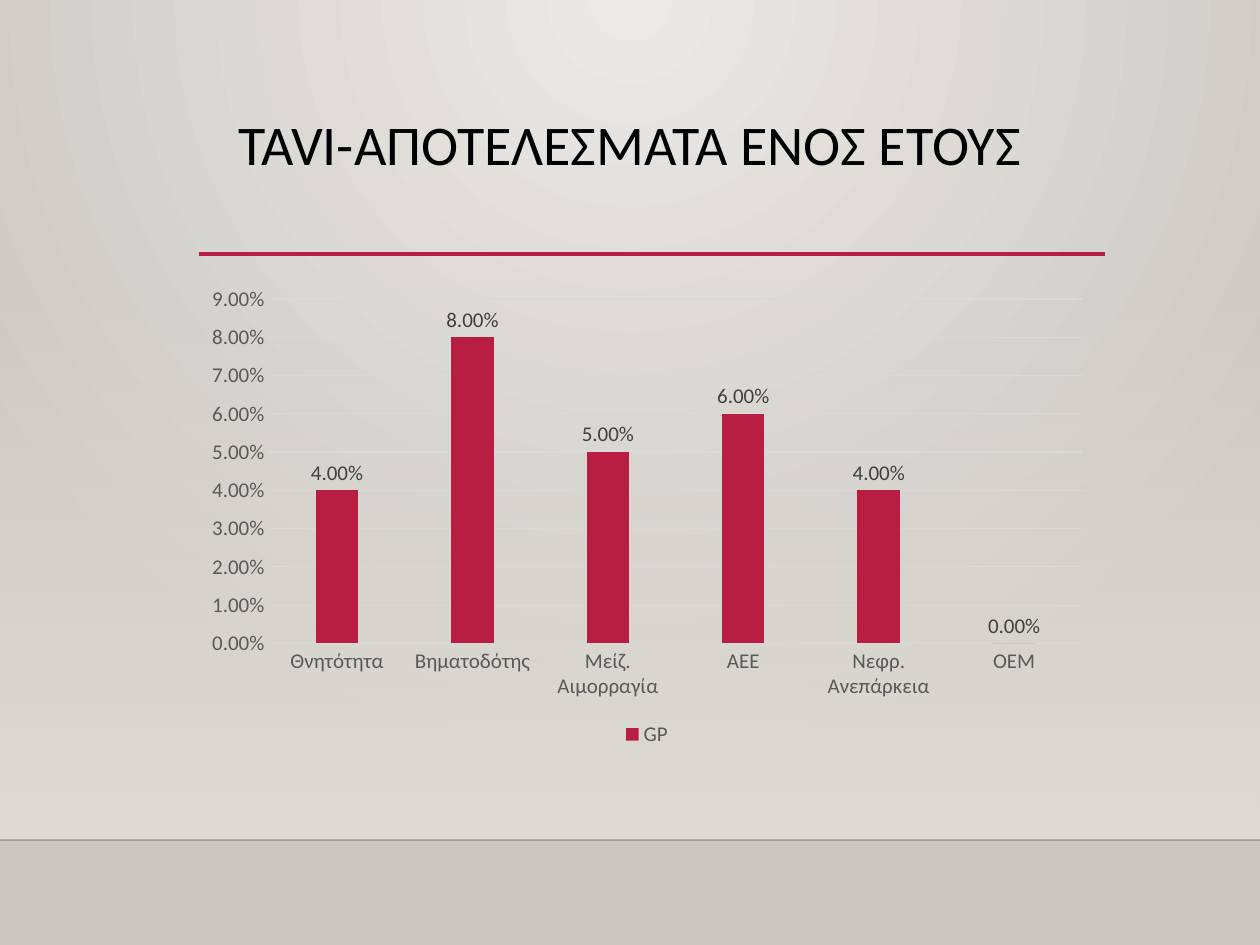
import pptx
import pptx.util
import pptx.chart.data
import pptx.enum.chart
import pptx.enum.shapes
import pptx.enum.text
import pptx.dml.color
import pptx.oxml
import pptx.oxml.ns

SCALE = 7257.14
FONT = "Calibri"
PERCENT = "0.00%"
COLORS = {
    "glow": "ECEAE7", "edge": "CAC7C1", "wall": "DFDBD5", "floor": "000001",
    "accent": "B71E42", "title": "000000", "axis": "595959", "label": "404040",
    "grid": "D9D9D9",
}

TITLE = "TAVI-ΑΠΟΤΕΛΕΣΜΑΤΑ ΕΝΟΣ ΕΤΟΥΣ"
SERIES = "GP"
RESULTS = [
    ("Θνητότητα", 0.04),
    ("Βηματοδότης", 0.08),
    ("Μείζ. Αιμορραγία", 0.05),
    ("AEE", 0.06),
    ("Νεφρ. Ανεπάρκεια", 0.04),
    ("ΟΕΜ", 0),
]

SLIDE = (1260, 945)
WALL = (0, 277, 1260, 563)
TITLE_BOX = (0, 111, 1260, 145)
CHART_BOX = (194, 277, 906, 475)
RULES = [
    (0, 1260, 840, "floor", 1, 20),
    (199, 1105, 254, "accent", 2.5, 100),
]
CIRCLE = '<a:path path="circle"><a:fillToRect l="43000" t="0" r="43000" b="100000"/></a:path>'
DOWNWARD = '<a:lin ang="5400000" scaled="0"/>'


def px(*values):
    return [pptx.util.Emu(round(value * SCALE)) for value in values]


def color(name):
    return pptx.dml.color.RGBColor.from_string(COLORS[name])


def style_font(font, size, name):
    font.name = FONT
    font.size = pptx.util.Pt(size)
    font.color.rgb = color(name)


def style_line(line, name, width):
    line.color.rgb = color(name)
    line.width = pptx.util.Pt(width)


def set_gradient(element, fill, stops, direction):
    fill.solid()
    fill.fore_color.rgb = color(stops[0][1])
    stop_xml = "".join(
        f'<a:gs pos="{place * 1000}"><a:srgbClr val="{COLORS[name]}">'
        f'<a:alpha val="{alpha * 1000}"/></a:srgbClr></a:gs>'
        for place, name, alpha in stops
    )
    gradient = pptx.oxml.parse_xml(
        f'<a:gradFill {pptx.oxml.ns.nsdecls("a")} rotWithShape="1">'
        f"<a:gsLst>{stop_xml}</a:gsLst>{direction}</a:gradFill>"
    )
    solid = element.find(".//" + pptx.oxml.ns.qn("a:solidFill"))
    solid.getparent().replace(solid, gradient)


def add_backdrop(page):
    set_gradient(page.element, page.background.fill,
                 [(0, "glow", 100), (100, "edge", 100)], CIRCLE)
    wall = page.shapes.add_shape(pptx.enum.shapes.MSO_SHAPE.RECTANGLE, *px(*WALL))
    wall.shadow.inherit = False
    wall.line.fill.background()
    set_gradient(wall.element, wall.fill, [(0, "wall", 0), (100, "wall", 100)], DOWNWARD)


def add_rule(page, left, right, y, name, width, alpha):
    rule = page.shapes.add_connector(
        pptx.enum.shapes.MSO_CONNECTOR.STRAIGHT, *px(left, y, right, y))
    style_line(rule.line, name, width)
    properties = rule.element.spPr
    if alpha < 100:
        shade = properties.find(".//" + pptx.oxml.ns.qn("a:srgbClr"))
        shade.append(pptx.oxml.parse_xml(
            f'<a:alpha {pptx.oxml.ns.nsdecls("a")} val="{alpha * 1000}"/>'))
    properties.append(pptx.oxml.parse_xml(f'<a:effectLst {pptx.oxml.ns.nsdecls("a")}/>'))


def add_title(page):
    frame = page.shapes.add_textbox(*px(*TITLE_BOX)).text_frame
    frame.word_wrap = True
    frame.vertical_anchor = pptx.enum.text.MSO_ANCHOR.TOP
    frame.text = TITLE
    para = frame.paragraphs[0]
    para.alignment = pptx.enum.text.PP_ALIGN.CENTER
    para.line_spacing = 0.9
    style_font(para.runs[0].font, 32, "title")


def add_results_chart(page):
    data = pptx.chart.data.CategoryChartData(number_format=PERCENT)
    data.categories = [category for category, value in RESULTS]
    data.add_series(SERIES, [value for category, value in RESULTS])
    chart = page.shapes.add_chart(
        pptx.enum.chart.XL_CHART_TYPE.COLUMN_CLUSTERED, *px(*CHART_BOX), data).chart
    style_font(chart.font, 10, "title")
    chart.has_title = False
    chart.has_legend = True
    chart.legend.position = pptx.enum.chart.XL_LEGEND_POSITION.BOTTOM
    chart.legend.include_in_layout = False
    style_font(chart.legend.font, 12, "axis")

    for axis in (chart.category_axis, chart.value_axis):
        axis.major_tick_mark = pptx.enum.chart.XL_TICK_MARK.NONE
        axis.minor_tick_mark = pptx.enum.chart.XL_TICK_MARK.NONE
        style_font(axis.tick_labels.font, 12, "axis")
    style_line(chart.category_axis.format.line, "grid", 0.75)
    value_axis = chart.value_axis
    value_axis.format.line.fill.background()
    value_axis.has_major_gridlines = True
    style_line(value_axis.major_gridlines.format.line, "grid", 0.75)
    value_axis.tick_labels.number_format = PERCENT
    value_axis.tick_labels.number_format_is_linked = False

    plot = chart.plots[0]
    plot.vary_by_categories = False
    plot.gap_width = 219
    plot.overlap = -27
    series = plot.series[0]
    series.format.fill.solid()
    series.format.fill.fore_color.rgb = color("accent")
    labels = series.data_labels
    labels.show_value = True
    labels.number_format = PERCENT
    labels.number_format_is_linked = False
    labels.position = pptx.enum.chart.XL_LABEL_POSITION.OUTSIDE_END
    style_font(labels.font, 12, "label")


def main():
    deck = pptx.Presentation()
    deck.slide_width, deck.slide_height = px(*SLIDE)
    page = deck.slides.add_slide(deck.slide_layouts[6])
    add_backdrop(page)
    for rule in RULES:
        add_rule(page, *rule)
    add_title(page)
    add_results_chart(page)
    deck.save("out.pptx")


if __name__ == "__main__":
    main()
